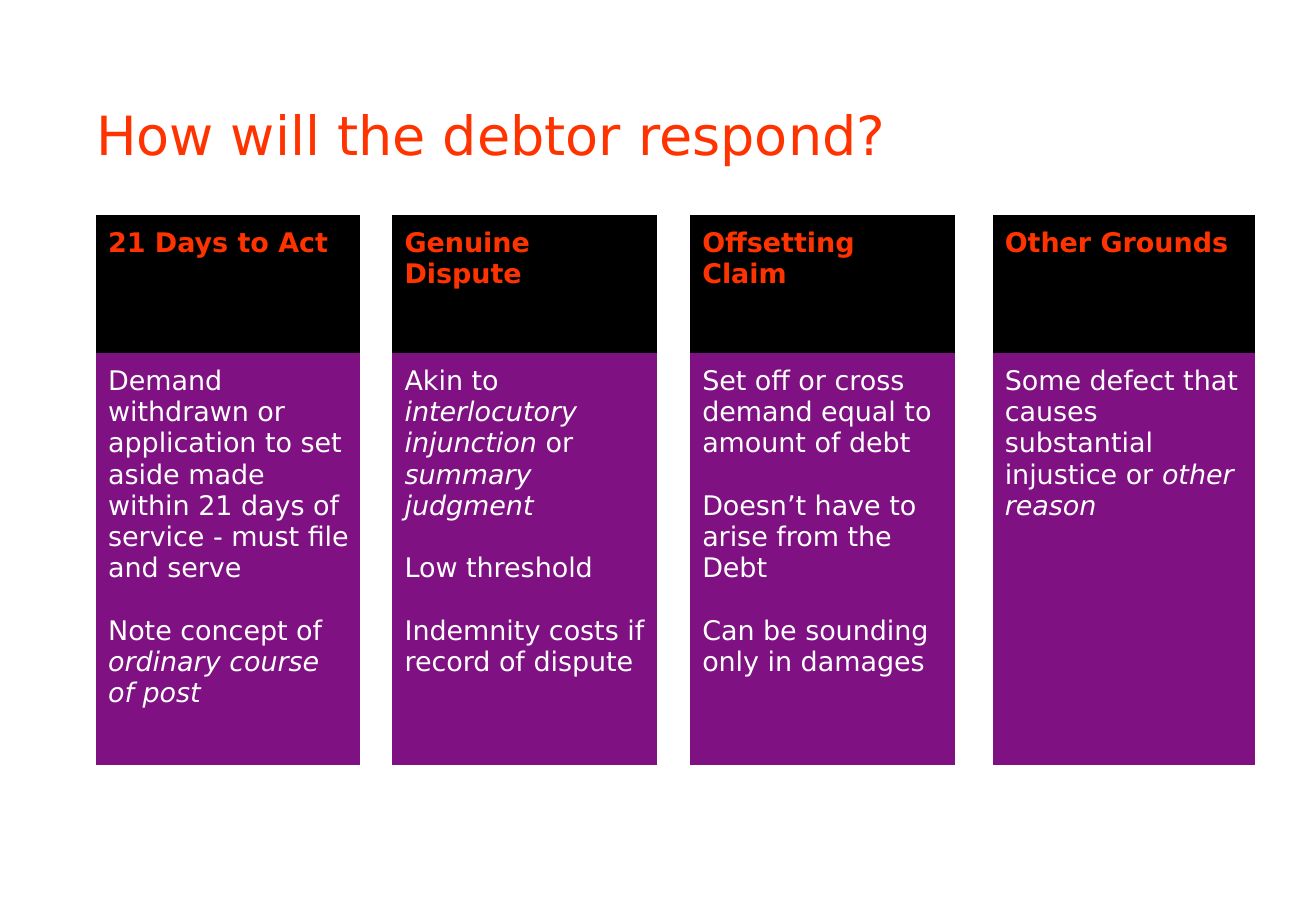
from pptx import Presentation
from pptx.dml.color import RGBColor
from pptx.enum import text
from pptx.oxml.ns import qn
from pptx.util import Inches, Pt

ORANGE = RGBColor(0xFF, 0x33, 0x00)
BLACK = RGBColor(0x00, 0x00, 0x00)
PURPLE = RGBColor(0x7F, 0x11, 0x83)
WHITE = RGBColor(0xFF, 0xFF, 0xFF)
FONT = "DejaVu Sans"
NO_STYLE_NO_GRID = "{2D5ABB26-0587-4C30-8999-92F81FD0307C}"

COLUMN_WIDTHS = (2.17, 0.27, 2.18, 0.27, 2.18, 0.31, 2.16)
ROW_HEIGHTS = (1.14, 3.39)

# Each paragraph alternates upright and italic passages, upright first.
RESPONSES = (
    ("21 Days to Act", (
        ("Demand withdrawn or application to set aside made within 21 days "
         "of service - must file and serve",),
        ("Note concept of ", "ordinary course of post"),
    )),
    ("Genuine Dispute", (
        ("Akin to ", "interlocutory injunction", " or ", "summary judgment"),
        ("Low threshold",),
        ("Indemnity costs if record of dispute",),
    )),
    ("Offsetting Claim", (
        ("Set off or cross demand equal to amount of debt",),
        ("Doesn’t have to arise from the Debt",),
        ("Can be sounding only in damages",),
    )),
    ("Other Grounds", (
        ("Some defect that causes substantial injustice or ", "other reason"),
    )),
)


def style_paragraph(paragraph, size, colour, bold=False):
    paragraph.font.name = FONT
    paragraph.font.size = Pt(size)
    paragraph.font.color.rgb = colour
    paragraph.font.bold = bold


def add_title(slide, wording, left, top, width, height):
    title = slide.shapes.title
    title.left, title.top = Inches(left), Inches(top)
    title.width, title.height = Inches(width), Inches(height)
    frame = title.text_frame
    frame.margin_left = frame.margin_top = 0
    frame.margin_right = frame.margin_bottom = 0
    frame.vertical_anchor = text.MSO_ANCHOR.MIDDLE
    frame.word_wrap = True
    frame.text = wording
    frame.paragraphs[0].alignment = text.PP_ALIGN.LEFT
    style_paragraph(frame.paragraphs[0], 32, ORANGE)


def fill_cell(cell, passages, background, colour, bold=False):
    cell.fill.solid()
    cell.fill.fore_color.rgb = background
    cell.margin_left = cell.margin_top = Inches(0.1)
    cell.margin_right, cell.margin_bottom = Inches(0.08), Inches(0.04)
    frame = cell.text_frame
    for number, pieces in enumerate(passages):
        paragraph = frame.add_paragraph() if number else frame.paragraphs[0]
        if number:
            paragraph.space_before = Pt(18.6)
        style_paragraph(paragraph, 16, colour, bold)
        for position, wording in enumerate(pieces):
            run = paragraph.add_run()
            run.text = wording
            if position % 2:
                run.font.italic = True


def add_responses(slide, left, top, width, height):
    frame = slide.shapes.add_table(
        len(ROW_HEIGHTS), len(COLUMN_WIDTHS),
        Inches(left), Inches(top), Inches(width), Inches(height))
    table = frame.table
    table.first_row = table.horz_banding = False
    next(frame._element.iter(qn("a:tableStyleId"))).text = NO_STYLE_NO_GRID
    for column, share in zip(table.columns, COLUMN_WIDTHS):
        column.width = Inches(width * share / sum(COLUMN_WIDTHS))
    for row, share in zip(table.rows, ROW_HEIGHTS):
        row.height = Inches(height * share / sum(ROW_HEIGHTS))
    for cell in table.iter_cells():
        cell.fill.background()
    for index, (heading, details) in enumerate(RESPONSES):
        fill_cell(table.cell(0, 2 * index), ((heading,),), BLACK, ORANGE, True)
        fill_cell(table.cell(1, 2 * index), details, PURPLE, WHITE)


def main():
    deck = Presentation()
    deck.slide_width, deck.slide_height = Inches(10.83), Inches(7.5)
    slide = deck.slides.add_slide(deck.slide_layouts.get_by_name("Title Only"))
    add_title(slide, "How will the debtor respond?", 0.79, 0.59, 9.54, 1.02)
    add_responses(slide, 0.79, 1.77, 9.54, 4.53)
    deck.save("out.pptx")


if __name__ == "__main__":
    main()
